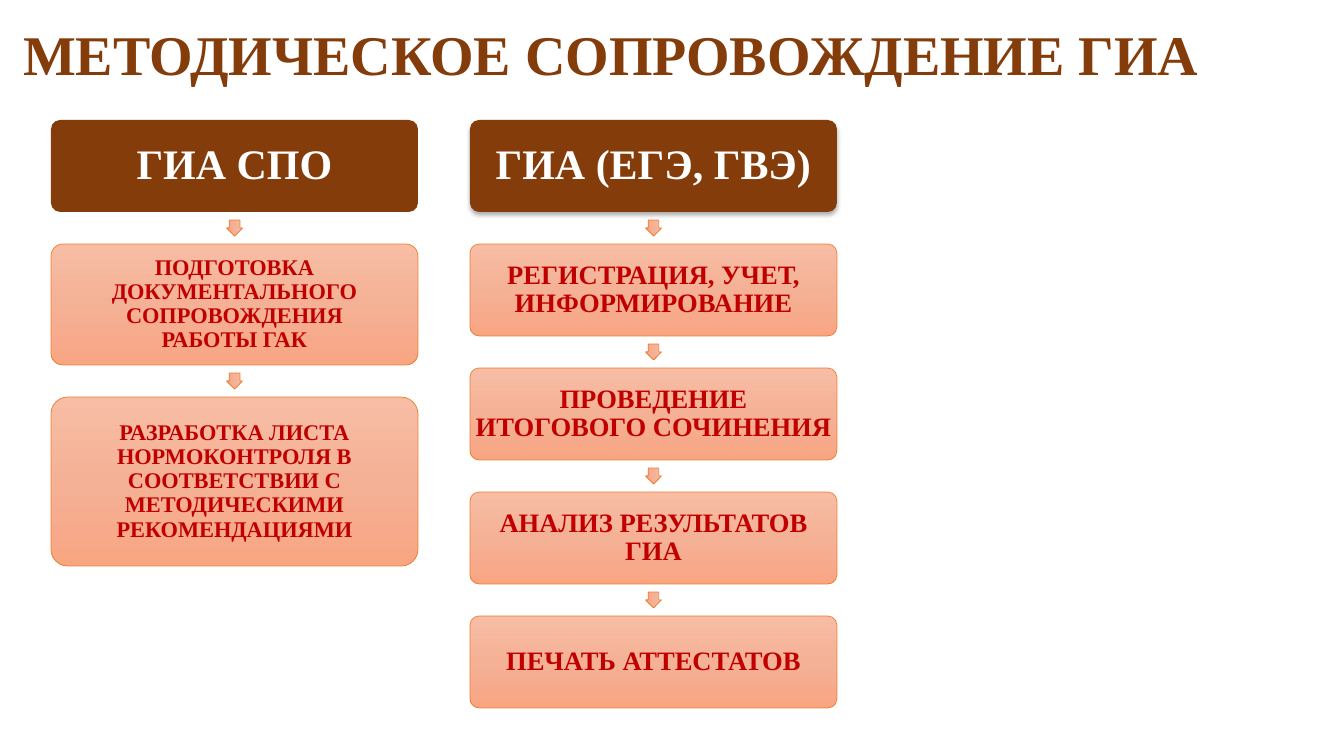
"""Builds the slide on methodical support of the final state examination."""
from copy import deepcopy

from lxml.etree import SubElement
from pptx import Presentation
from pptx.dml.color import RGBColor
from pptx.enum.shapes import MSO_SHAPE
from pptx.enum.text import MSO_ANCHOR, MSO_AUTO_SIZE, PP_ALIGN
from pptx.oxml.ns import qn
from pptx.util import Emu, Pt

PX = 914400 / 100.8
BROWN = RGBColor(0x84, 0x3C, 0x0B)
RED = RGBColor(0xC0, 0x00, 0x00)
WHITE = RGBColor(0xFF, 0xFF, 0xFF)
ORANGE = RGBColor(0xED, 0x7D, 0x31)
BLACK = RGBColor(0x00, 0x00, 0x00)
PEACH_STOPS = [
    (0, RGBColor(0xF7, 0xBD, 0xA5)),
    (0.5, RGBColor(0xF5, 0xB1, 0x96)),
    (1, RGBColor(0xF8, 0xA5, 0x82)),
]

COLUMN_LEFT, COLUMN_STEP, COLUMN_TOP = 51, 419, 120
BOX_WIDTH, BOX_HEIGHT, BOX_GAP = 367, 92, 32
ARROW_SIZE = 16

COLUMNS = [
    ("ГИА СПО", False, 16, 2, [
        ("ПОДГОТОВКА ДОКУМЕНТАЛЬНОГО СОПРОВОЖДЕНИЯ\nРАБОТЫ ГАК", 121),
        ("РАЗРАБОТКА ЛИСТА НОРМОКОНТРОЛЯ В СООТВЕТСТВИИ С "
         "МЕТОДИЧЕСКИМИ РЕКОМЕНДАЦИЯМИ", 169),
    ]),
    ("ГИА (ЕГЭ, ГВЭ)", True, 19, 3, [
        ("РЕГИСТРАЦИЯ, УЧЕТ, ИНФОРМИРОВАНИЕ", BOX_HEIGHT),
        ("ПРОВЕДЕНИЕ ИТОГОВОГО СОЧИНЕНИЯ", BOX_HEIGHT),
        ("АНАЛИЗ РЕЗУЛЬТАТОВ ГИА", BOX_HEIGHT),
        ("ПЕЧАТЬ АТТЕСТАТОВ", BOX_HEIGHT),
    ]),
]


def write_text(shape, text, size, color, align=PP_ALIGN.CENTER,
               anchor=MSO_ANCHOR.MIDDLE, inset=None):
    frame = shape.text_frame
    frame.word_wrap = True
    frame.auto_size = MSO_AUTO_SIZE.NONE
    frame.vertical_anchor = anchor
    if inset is not None:
        frame.margin_left = frame.margin_right = Emu(round(inset * PX))
        frame.margin_top = frame.margin_bottom = Emu(round(inset * PX))
    paragraph = frame.paragraphs[0]
    paragraph.alignment = align
    paragraph.line_spacing = 0.9
    for index, line in enumerate(text.split("\n")):
        if index:
            paragraph.add_line_break()
        run = paragraph.add_run()
        run.text = line
        run.font.name = "Times New Roman"
        run.font.size = Pt(size)
        run.font.bold = True
        run.font.color.rgb = color


def add_peach_shape(preset, left, top, width, height):
    shape = slide.shapes.add_shape(
        preset, *(Emu(round(value * PX)) for value in (left, top, width, height)))
    shape.shadow.inherit = False
    shape.line.color.rgb = ORANGE
    shape.line.width = Pt(0.5)
    shape.fill.gradient()
    shape.fill.gradient_angle = 270
    stop_list = shape.element.spPr.find(qn("a:gradFill")).find(qn("a:gsLst"))
    stop_list.insert(1, deepcopy(stop_list[0]))
    for stop, (position, color) in zip(shape.fill.gradient_stops, PEACH_STOPS):
        stop.position = position
        stop.color.rgb = color
    return shape


presentation = Presentation()
presentation.slide_width = Emu(round(1344 * PX))
presentation.slide_height = Emu(round(756 * PX))
slide = presentation.slides.add_slide(presentation.slide_layouts[5])

title = slide.shapes.title
title.left, title.top, title.width, title.height = (
    Emu(round(value * PX)) for value in (13, 22, 1210, 126))
write_text(title, "МЕТОДИЧЕСКОЕ СОПРОВОЖДЕНИЕ ГИА", 40, BROWN,
           align=PP_ALIGN.LEFT, anchor=MSO_ANCHOR.TOP)

for column, (heading, has_shadow, size, inset, steps) in enumerate(COLUMNS):
    left = COLUMN_LEFT + column * COLUMN_STEP
    top = COLUMN_TOP
    header = add_peach_shape(
        MSO_SHAPE.ROUNDED_RECTANGLE, left, top, BOX_WIDTH, BOX_HEIGHT)
    header.adjustments[0] = 0.1
    header.fill.solid()
    header.fill.fore_color.rgb = BROWN
    header.line.fill.background()
    write_text(header, heading, 30, WHITE, inset=4)
    if has_shadow:
        effects = header.element.spPr.find(qn("a:effectLst"))
        shadow = SubElement(effects, qn("a:outerShdw"), blurRad=str(Pt(3.5)),
                            dist=str(Pt(2.2)), dir="5400000", rotWithShape="0")
        shadow_color = SubElement(shadow, qn("a:srgbClr"), val=str(BLACK))
        SubElement(shadow_color, qn("a:alpha"), val="32000")

    top += BOX_HEIGHT
    for text, height in steps:
        arrow = add_peach_shape(
            MSO_SHAPE.RIGHT_ARROW, left + (BOX_WIDTH - ARROW_SIZE) / 2,
            top + (BOX_GAP - ARROW_SIZE) / 2, ARROW_SIZE, ARROW_SIZE)
        arrow.rotation = 90
        arrow.adjustments[0] = 0.67
        top += BOX_GAP
        box = add_peach_shape(
            MSO_SHAPE.ROUNDED_RECTANGLE, left, top, BOX_WIDTH, height)
        box.adjustments[0] = 0.1
        write_text(box, text, size, RED, inset=inset)
        top += height

presentation.save("out.pptx")
